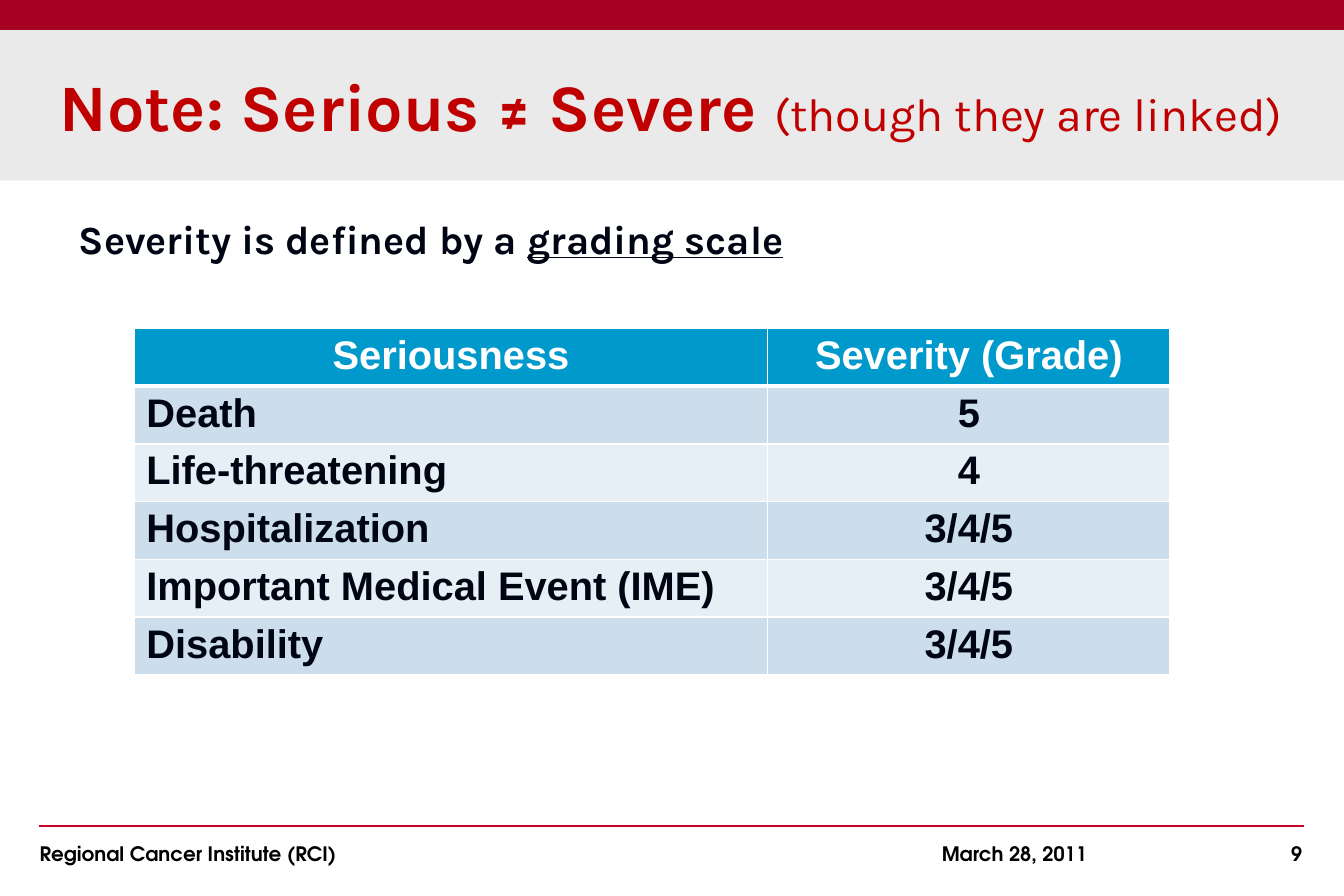
from dataclasses import dataclass

from lxml import etree
from pptx import Presentation
from pptx.dml.color import RGBColor
from pptx.enum.shapes import MSO_CONNECTOR, MSO_SHAPE
from pptx.enum.text import MSO_ANCHOR, PP_ALIGN
from pptx.oxml import parse_xml
from pptx.oxml.ns import nsdecls, qn
from pptx.util import Pt

LEFT, CENTER, RIGHT = PP_ALIGN.LEFT, PP_ALIGN.CENTER, PP_ALIGN.RIGHT
MIDDLE = MSO_ANCHOR.MIDDLE
RECTANGLE, STRAIGHT = MSO_SHAPE.RECTANGLE, MSO_CONNECTOR.STRAIGHT

CRIMSON = RGBColor(0xA5, 0x00, 0x21)
RULE_RED = RGBColor(0xC8, 0x00, 0x26)
TITLE_RED = RGBColor(0xC0, 0x00, 0x00)
PALE_GRAY = RGBColor(0xEA, 0xEA, 0xEA)
HEADER_BLUE = RGBColor(0x00, 0x99, 0xCC)
BAND_DARK = RGBColor(0xCC, 0xDE, 0xEC)
BAND_LIGHT = RGBColor(0xE7, 0xEF, 0xF6)
INK = RGBColor(0x00, 0x05, 0x14)
BLACK = RGBColor(0x00, 0x00, 0x00)
WHITE = RGBColor(0xFF, 0xFF, 0xFF)

SLIDE_WIDTH, SLIDE_HEIGHT = 810, 540
TITLE_FONT, TABLE_FONT, FOOTER_FONT = "Karla", "Arial", "TeX Gyre Adventor"
COLUMN_WIDTHS = (381.6, 242.6)
ROW_HEIGHT = 33.8


@dataclass(frozen=True)
class FooterItem:
    text: str
    left: float
    width: float
    align: PP_ALIGN = LEFT


@dataclass(frozen=True)
class Grading:
    seriousness: str
    grade: str


FOOTER = (
    FooterItem("Regional Cancer Institute (RCI)", 23.8, 300),
    FooterItem("March 28, 2011", 567.6, 120),
    FooterItem("9", 664.6, 120.2, RIGHT),
)
HEADER = Grading("Seriousness", "Severity (Grade)")
GRADINGS = (
    Grading("Death", "5"),
    Grading("Life-threatening", "4"),
    Grading("Hospitalization", "3/4/5"),
    Grading("Important Medical Event (IME)", "3/4/5"),
    Grading("Disability", "3/4/5"),
)


def style_font(font, name: str, size: float, color: RGBColor) -> None:
    font.name, font.size, font.bold = name, Pt(size), True
    font.color.rgb = color


def add_text_frame(slide, left: float, top: float, width: float, height: float):
    box = slide.shapes.add_textbox(Pt(left), Pt(top), Pt(width), Pt(height))
    box.text_frame.word_wrap = True
    return box.text_frame


def add_title(slide) -> None:
    title = slide.shapes.title
    title.left, title.top = Pt(0), Pt(18)
    title.width, title.height = Pt(SLIDE_WIDTH), Pt(90.7)
    title.fill.solid()
    title.fill.fore_color.rgb = PALE_GRAY
    frame = title.text_frame
    frame.vertical_anchor = MIDDLE
    frame.margin_left = Pt(36)
    heading = frame.paragraphs[0]
    heading.alignment = LEFT
    style_font(heading.font, TITLE_FONT, 40, TITLE_RED)
    heading.add_run().text = "Note: Serious ≠ Severe "
    aside = heading.add_run()
    aside.text = "(though they are linked)"
    aside.font.size, aside.font.bold = Pt(28), False


def add_top_bar(slide) -> None:
    bar = slide.shapes.add_shape(RECTANGLE, Pt(0), Pt(0), Pt(SLIDE_WIDTH), Pt(18))
    bar.shadow.inherit = False
    bar.fill.solid()
    bar.fill.fore_color.rgb = CRIMSON
    bar.line.fill.background()


def add_statement(slide) -> None:
    statement = add_text_frame(slide, 40.3, 126, 728.6, 40).paragraphs[0]
    style_font(statement.font, TITLE_FONT, 24, INK)
    statement.add_run().text = "Severity is defined by a "
    scale = statement.add_run()
    scale.text = "grading scale"
    scale.font.underline = True


def set_borders(cell, bottom: float) -> None:
    """Draw white cell borders; the bottom one has its own width in points."""
    properties = cell._tc.get_or_add_tcPr()
    widths = {"lnL": 1, "lnR": 1, "lnT": 1, "lnB": bottom}
    for position, (side, width) in enumerate(widths.items()):
        properties.insert(position, parse_xml(
            f'<a:{side} {nsdecls("a")} w="{Pt(width)}"><a:solidFill>'
            f'<a:srgbClr val="{WHITE}"/></a:solidFill></a:{side}>'))


def fill_cell(cell, text: str, align: PP_ALIGN, fill: RGBColor,
              color: RGBColor, bottom: float) -> None:
    cell.text = text
    cell.margin_top = cell.margin_bottom = Pt(3)
    cell.fill.solid()
    cell.fill.fore_color.rgb = fill
    paragraph = cell.text_frame.paragraphs[0]
    paragraph.alignment = align
    style_font(paragraph.font, TABLE_FONT, 24, color)
    set_borders(cell, bottom)


def add_grading_table(slide) -> None:
    rows = (HEADER, *GRADINGS)
    table = slide.shapes.add_table(
        len(rows), len(COLUMN_WIDTHS), Pt(81), Pt(198),
        Pt(sum(COLUMN_WIDTHS)), Pt(ROW_HEIGHT * len(rows))).table
    for column, width in zip(table.columns, COLUMN_WIDTHS):
        column.width = Pt(width)
    for index, grading in enumerate(rows):
        if index == 0:
            fill, color, bottom, align = HEADER_BLUE, WHITE, 3, CENTER
        else:
            fill = BAND_DARK if index % 2 else BAND_LIGHT
            color, bottom, align = INK, 1, LEFT
        fill_cell(table.cell(index, 0), grading.seriousness, align, fill, color, bottom)
        fill_cell(table.cell(index, 1), grading.grade, CENTER, fill, color, bottom)


def add_footer(slide) -> None:
    rule = slide.shapes.add_connector(STRAIGHT, Pt(23.8), Pt(498), Pt(786.2), Pt(498))
    rule.line.color.rgb = RULE_RED
    rule.line.width = Pt(1)
    etree.SubElement(rule._element.spPr, qn("a:effectLst"))
    for item in FOOTER:
        frame = add_text_frame(slide, item.left, 504, item.width, 21.6)
        frame.margin_left = frame.margin_right = Pt(0)
        paragraph = frame.paragraphs[0]
        paragraph.text = item.text
        paragraph.alignment = item.align
        style_font(paragraph.font, FOOTER_FONT, 12, BLACK)


def main() -> None:
    deck = Presentation()
    deck.slide_width, deck.slide_height = Pt(SLIDE_WIDTH), Pt(SLIDE_HEIGHT)
    slide = deck.slides.add_slide(deck.slide_layouts.get_by_name("Title Only"))
    add_title(slide)
    add_top_bar(slide)
    add_statement(slide)
    add_grading_table(slide)
    add_footer(slide)
    deck.save("out.pptx")


if __name__ == "__main__":
    main()
